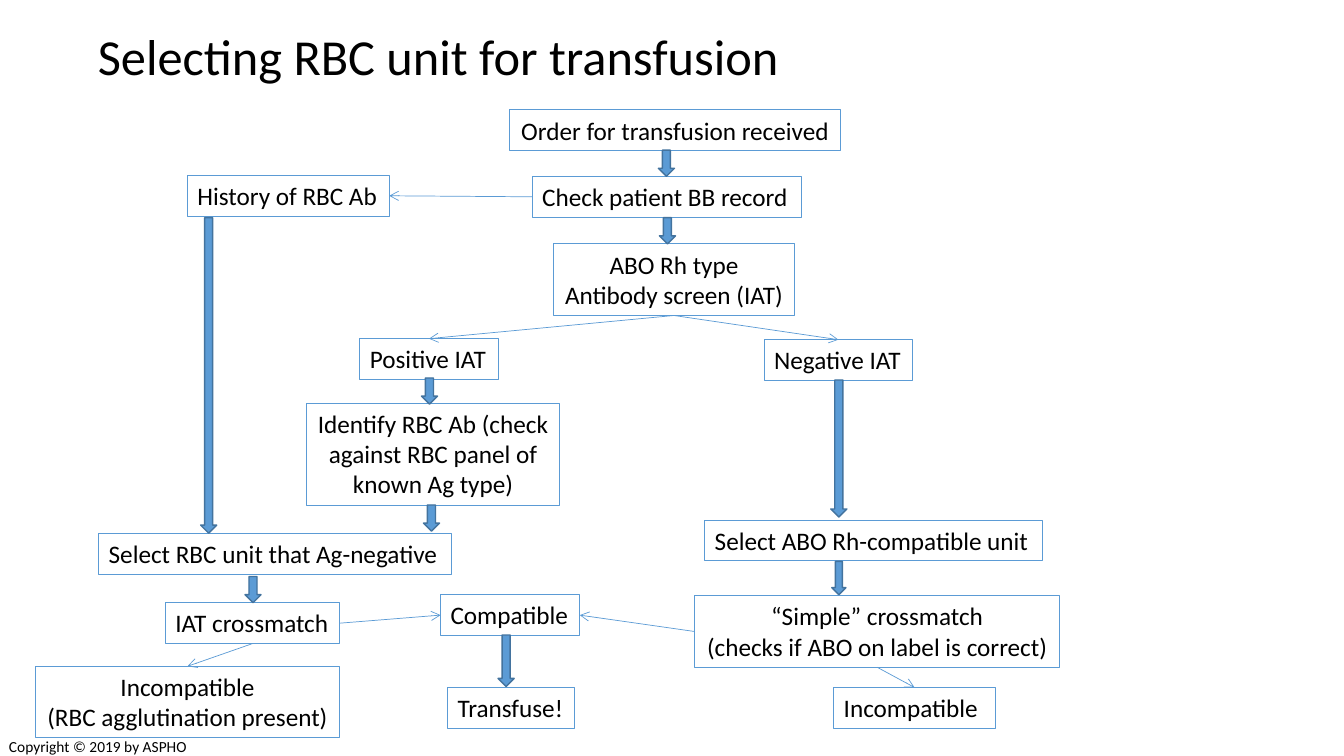
from lxml.etree import SubElement
from pptx import Presentation
from pptx.dml.color import RGBColor
from pptx.enum.shapes import MSO_CONNECTOR, MSO_SHAPE
from pptx.enum.text import MSO_ANCHOR, MSO_AUTO_SIZE, PP_ALIGN
from pptx.oxml.ns import qn
from pptx.util import Inches, Pt

BLACK = RGBColor(0x00, 0x00, 0x00)
BLUE = RGBColor(0x5B, 0x9B, 0xD5)
DARK_BLUE = RGBColor(0x43, 0x73, 0x9E)
FONT = "Calibri"
TOP, LEFT, BOTTOM, RIGHT = range(4)


def write_text(frame, text, size=18, align=PP_ALIGN.LEFT, anchor=MSO_ANCHOR.TOP, spacing=1.0):
    """Fill a text frame with one paragraph for each line of text."""
    frame.word_wrap = True
    frame.auto_size = MSO_AUTO_SIZE.NONE
    frame.vertical_anchor = anchor
    frame.text = text
    for paragraph in frame.paragraphs:
        paragraph.alignment = align
        paragraph.line_spacing = spacing
        paragraph.font.size = Pt(size)
        paragraph.font.name = FONT
        paragraph.font.color.rgb = BLACK


class FlowSlide:
    """A flow chart slide with its boxes, block arrows and thin arrows."""

    def __init__(self, presentation):
        """Add a slide that has only a title."""
        self.slide = presentation.slides.add_slide(presentation.slide_layouts[5])
        self.shapes = self.slide.shapes

    def title(self, text):
        """Place and write the title."""
        title = self.shapes.title
        title.left, title.top = Inches(0.87), Inches(0.24)
        title.width, title.height = Inches(11.5), Inches(0.7)
        write_text(title.text_frame, text, size=36, anchor=MSO_ANCHOR.MIDDLE, spacing=0.9)

    def box(self, text, left, top, width, centred=False):
        """Draw an outlined step whose height follows its number of lines."""
        height = 0.1 + 0.305 * len(text.split("\n"))
        shape = self.shapes.add_shape(
            MSO_SHAPE.RECTANGLE, Inches(left), Inches(top), Inches(width), Inches(height))
        shape.shadow.inherit = False
        shape.fill.background()
        shape.line.color.rgb = BLUE
        shape.line.width = Pt(0.75)
        frame = shape.text_frame
        frame.margin_left = Inches(0.05 if centred else 0.1)
        frame.margin_right = Inches(0.05 if centred else 0)
        write_text(frame, text, align=PP_ALIGN.CENTER if centred else PP_ALIGN.LEFT)
        return shape

    def block_arrow(self, left, top, height=0.26, width=0.16):
        """Draw a filled arrow that points down."""
        shape = self.shapes.add_shape(
            MSO_SHAPE.DOWN_ARROW, Inches(left), Inches(top), Inches(width), Inches(height))
        shape.shadow.inherit = False
        shape.fill.solid()
        shape.fill.fore_color.rgb = BLUE
        shape.line.color.rgb = DARK_BLUE
        shape.line.width = Pt(1)

    def link(self, start, start_side, end, end_side):
        """Join two boxes with a thin arrow."""
        connector = self.shapes.add_connector(MSO_CONNECTOR.STRAIGHT, 0, 0, 0, 0)
        connector.begin_connect(start, start_side)
        connector.end_connect(end, end_side)
        connector.line.color.rgb = BLUE
        connector.line.width = Pt(0.5)
        SubElement(connector.line._get_or_add_ln(), qn("a:tailEnd"), type="arrow")
        SubElement(connector._element.spPr, qn("a:effectLst"))

    def label(self, text, left, top, width, height, size):
        """Write plain text without an outline."""
        label = self.shapes.add_textbox(Inches(left), Inches(top), Inches(width), Inches(height))
        write_text(label.text_frame, text, size=size)


def main():
    """Build the slide and save it."""
    presentation = Presentation()
    presentation.slide_width = Inches(13.33)
    presentation.slide_height = Inches(7.5)
    flow = FlowSlide(presentation)
    flow.title("Selecting RBC unit for transfusion")

    flow.box("Order for transfusion received", 5.05, 1.09, 3.29, centred=True)
    record = flow.box("Check patient BB record", 5.28, 1.75, 2.67)
    screen = flow.box("ABO Rh type\nAntibody screen (IAT)", 5.49, 2.42, 2.39, centred=True)
    iat_crossmatch = flow.box("IAT crossmatch", 1.64, 5.98, 1.73)
    history = flow.box("History of RBC Ab", 1.86, 1.74, 2)
    positive = flow.box("Positive IAT", 3.57, 3.36, 1.37)
    negative = flow.box("Negative IAT", 7.58, 3.37, 1.47)
    flow.box("Identify RBC Ab (check\nagainst RBC panel of\nknown Ag type)",
             3.04, 4, 2.51, centred=True)
    flow.box("Select RBC unit that Ag-negative", 0.98, 5.29, 3.5)
    flow.box("Select ABO Rh-compatible unit", 6.99, 5.16, 3.35)
    simple_crossmatch = flow.box("“Simple” crossmatch\n(checks if ABO on label is correct)",
                                 6.89, 5.91, 3.62, centred=True)
    compatible = flow.box("Compatible", 4.37, 5.9, 1.38)
    agglutination = flow.box("Incompatible\n(RBC agglutination present)",
                             0.35, 6.61, 3.02, centred=True)
    flow.box("Transfuse!", 4.44, 6.82, 1.26)
    incompatible = flow.box("Incompatible", 8.27, 6.82, 1.6)

    for left, top in ((6.53, 1.49), (6.54, 2.16), (4.18, 3.75), (4.2, 5.01), (2.43, 5.72)):
        flow.block_arrow(left, top)
    flow.block_arrow(1.99, 2.16, height=3.13)
    flow.block_arrow(8.24, 3.77, height=1.36)
    flow.block_arrow(8.25, 5.57, height=0.33, width=0.14)
    flow.block_arrow(4.94, 6.3, height=0.51)

    flow.link(record, LEFT, history, RIGHT)
    flow.link(screen, BOTTOM, positive, TOP)
    flow.link(screen, BOTTOM, negative, TOP)
    flow.link(iat_crossmatch, RIGHT, compatible, LEFT)
    flow.link(iat_crossmatch, BOTTOM, agglutination, TOP)
    flow.link(simple_crossmatch, BOTTOM, incompatible, TOP)
    flow.link(simple_crossmatch, LEFT, compatible, RIGHT)

    flow.label("Copyright © 2019 by ASPHO", -0.01, 7.26, 3.4, 0.29, size=11)
    presentation.save("out.pptx")


if __name__ == "__main__":
    main()
